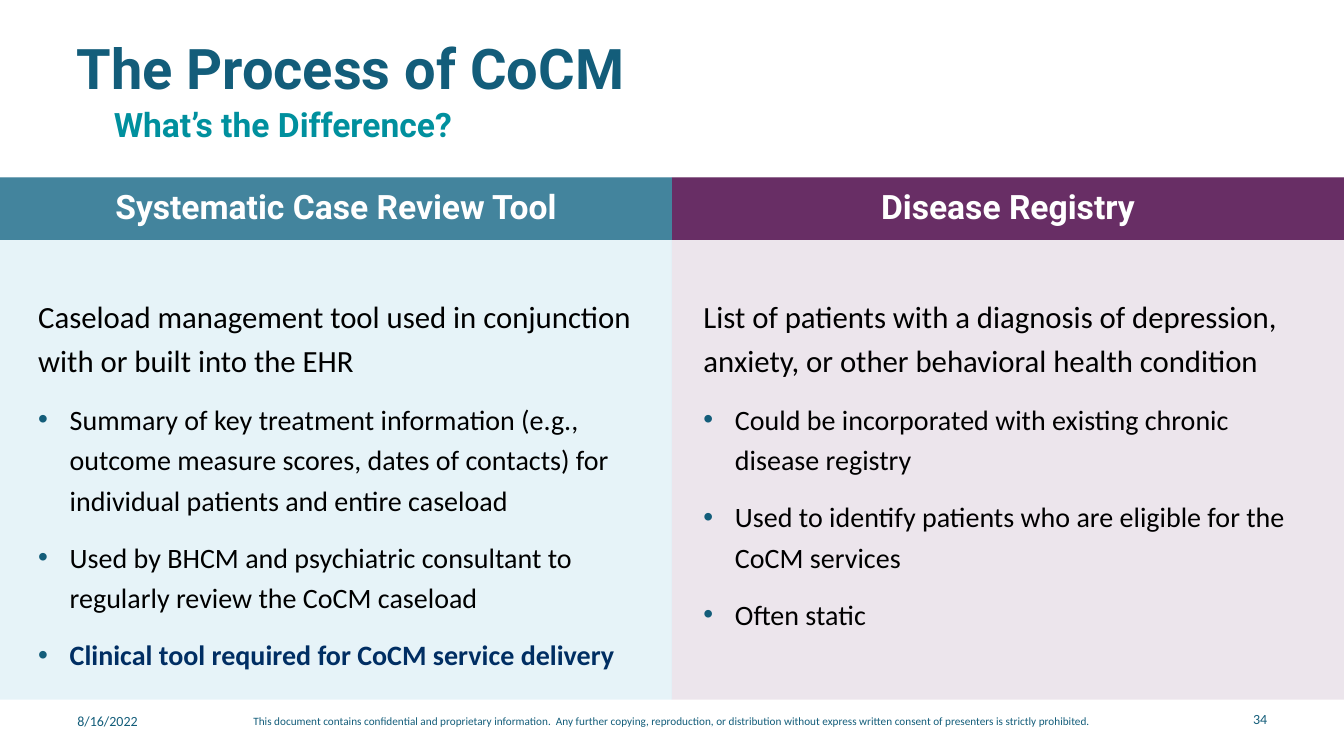
"""Build a slide comparing a systematic case review tool with a disease registry."""
import pptx
import pptx.dml.color
import pptx.enum.shapes
import pptx.enum.text
import pptx.oxml.ns
import pptx.util
from lxml import etree

Pt = pptx.util.Pt
ALIGN = pptx.enum.text.PP_ALIGN
ANCHOR = pptx.enum.text.MSO_ANCHOR
qn = pptx.oxml.ns.qn

WIDTH, HEIGHT = 960, 540
HALF = WIDTH / 2
BAND_TOP, BAND_HEIGHT, PANEL_HEIGHT = 126.7, 44.6, 373
NAVY, TEAL, WHITE, BLACK, DARK_BLUE = "135D7A", "00909E", "FFFFFF", "000000", "002E63"


def color(hex_string):
    return pptx.dml.color.RGBColor.from_string(hex_string)


def write(paragraph, text, size=20, font="Calibri", ink=BLACK, bold=False,
          align=ALIGN.LEFT, spacing=None, after=None, bullet=None, indent=22.5):
    if bullet:
        properties = paragraph._p.get_or_add_pPr()
        properties.set("marL", str(Pt(indent)))
        properties.set("indent", str(-Pt(indent)))
        bullet_color = etree.SubElement(properties, qn("a:buClr"))
        etree.SubElement(bullet_color, qn("a:srgbClr"), val=bullet)
        etree.SubElement(properties, qn("a:buFont"), typeface="Arial")
        etree.SubElement(properties, qn("a:buChar"), char="•")
    paragraph.alignment = align
    if spacing:
        paragraph.line_spacing = spacing
    if after:
        paragraph.space_after = Pt(after)
    run = paragraph.add_run()
    run.text = text
    run.font.size = Pt(size)
    run.font.name = font
    run.font.bold = bold
    run.font.color.rgb = color(ink)


class Deck:
    def __init__(self):
        self.presentation = pptx.Presentation()
        self.presentation.slide_width = Pt(WIDTH)
        self.presentation.slide_height = Pt(HEIGHT)
        self.slide = self.presentation.slides.add_slide(self.presentation.slide_layouts[6])

    def block(self, left, top, width, height, fill, opacity=None):
        rectangle = self.slide.shapes.add_shape(
            pptx.enum.shapes.MSO_SHAPE.RECTANGLE, Pt(left), Pt(top), Pt(width), Pt(height))
        rectangle.shadow.inherit = False
        rectangle.line.fill.background()
        rectangle.fill.solid()
        rectangle.fill.fore_color.rgb = color(fill)
        if opacity:
            tint = rectangle._element.spPr.find(".//" + qn("a:srgbClr"))
            etree.SubElement(tint, qn("a:alpha"), val=str(opacity * 1000))

    def frame(self, left, top, width, height, anchor=ANCHOR.TOP):
        frame = self.slide.shapes.add_textbox(
            Pt(left), Pt(top), Pt(width), Pt(height)).text_frame
        frame.word_wrap = True
        frame.vertical_anchor = anchor
        return frame

    def label(self, text, left, top, width, height, anchor=ANCHOR.TOP, **style):
        write(self.frame(left, top, width, height, anchor).paragraphs[0], text, **style)

    def column(self, left, heading, fill, tint, text_left, text_height, lead, points):
        self.block(left, BAND_TOP, HALF, BAND_HEIGHT, fill)
        self.block(left, BAND_TOP, HALF, PANEL_HEIGHT, tint, opacity=12)
        self.label(heading, left, 129.6, HALF, 36, size=24, font="Roboto",
                   ink=WHITE, bold=True, align=ALIGN.CENTER)
        body = self.frame(text_left, 203.8, 445, text_height)
        write(body.paragraphs[0], lead, size=22, spacing=1.2, after=12)
        for point, emphasis in points:
            write(body.add_paragraph(), point, spacing=1.2, after=12, bullet=NAVY, **emphasis)


def main():
    deck = Deck()
    deck.label("8/16/2022", 48.2, 505.4, 72.7, 28.8, size=10, ink=NAVY)
    deck.label("34", 839.5, 504, 72.7, 28.8, size=10, ink=NAVY, align=ALIGN.RIGHT)
    deck.label("This document contains confidential and proprietary information.  Any further "
               "copying, reproduction, or distribution without express written consent of "
               "presenters is strictly prohibited.",
               121, 506.9, 718.6, 28.8, size=8, ink=NAVY, align=ALIGN.CENTER)
    deck.column(HALF, "Disease Registry", "682E65", "682E65", 495.4, 229,
                "List of patients with a diagnosis of depression, anxiety, or other "
                "behavioral health condition",
                [("Could be incorporated with existing chronic disease registry", {}),
                 ("Used to identify patients who are eligible for the CoCM services", {}),
                 ("Often static", {})])
    deck.column(0, "Systematic Case Review Tool", "468097", "35A1CD", 20.2, 244,
                "Caseload management tool used in conjunction with or built into the EHR",
                [("Summary of key treatment information (e.g., outcome measure scores, dates "
                  "of contacts) for individual patients and entire caseload", {}),
                 ("Used by BHCM and psychiatric consultant to regularly review the CoCM "
                  "caseload", {}),
                 ("Clinical tool required for CoCM service delivery",
                  {"ink": DARK_BLUE, "bold": True})])
    deck.label("The Process of CoCM", 47.5, 28.8, 846, 44.6, ANCHOR.MIDDLE,
               size=40, font="Roboto", ink=NAVY, bold=True, spacing=0.9)
    deck.label("What’s the Difference?", 74.2, 42.5, 839.5, 64.8, ANCHOR.BOTTOM,
               size=24, font="Roboto", ink=TEAL, bold=True, spacing=0.9)
    deck.presentation.save("out.pptx")


if __name__ == "__main__":
    main()
